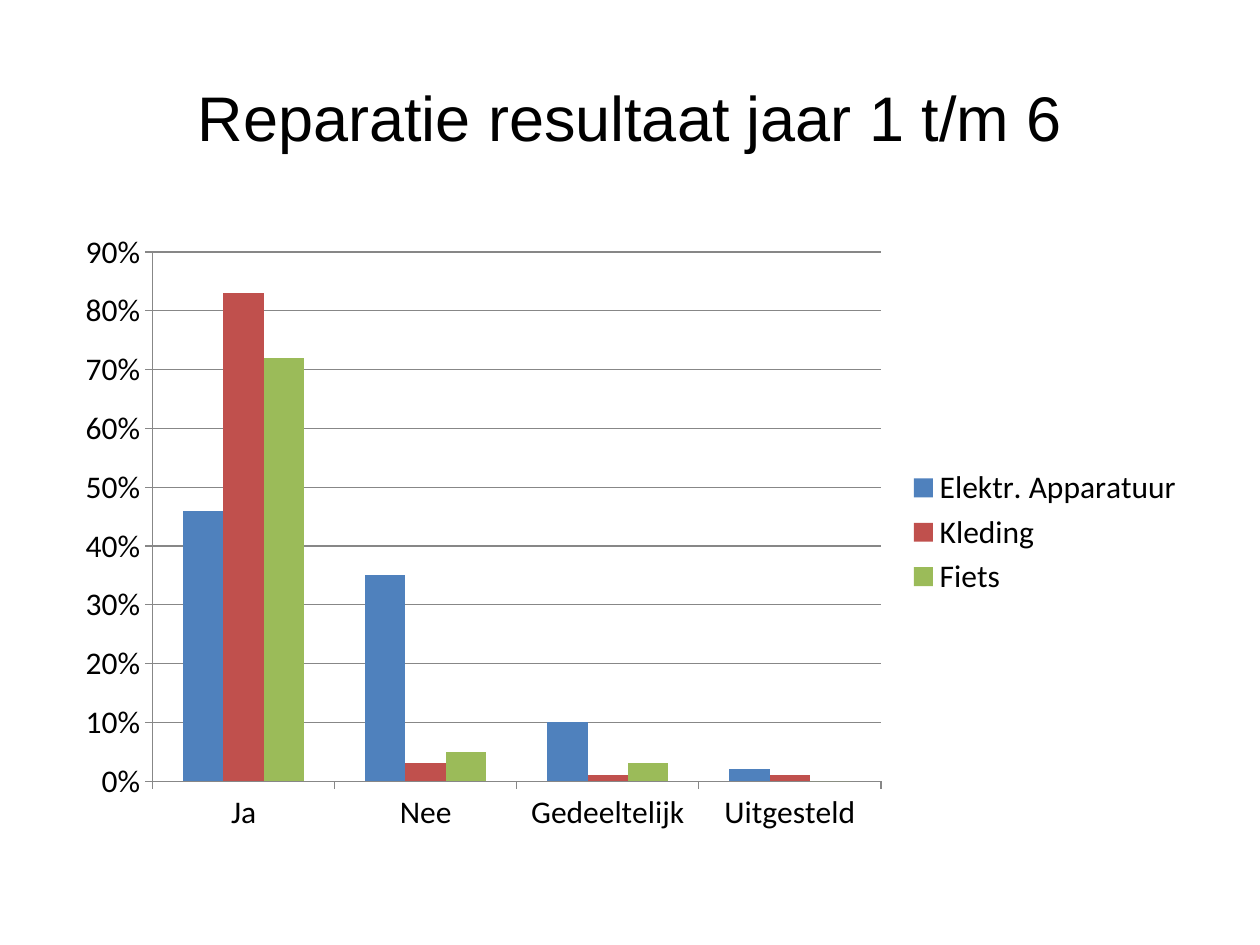
from dataclasses import dataclass

from pptx import Presentation
from pptx.chart.data import CategoryChartData
from pptx.dml.color import RGBColor
from pptx.enum.chart import XL_CHART_TYPE as ChartType
from pptx.enum.chart import XL_LEGEND_POSITION as LegendPosition
from pptx.enum.chart import XL_TICK_MARK as TickMark
from pptx.enum.text import MSO_ANCHOR as Anchor
from pptx.enum.text import PP_ALIGN as Align
from pptx.util import Inches, Pt


@dataclass(frozen=True)
class Theme:
    title_font: str = "Arial"
    chart_font: str = "Calibri"
    title_size: int = 36
    chart_size: int = 18
    text: str = "000000"
    line: str = "878787"
    background: str = "FFFFFF"
    series: tuple = ("4F81BD", "C0504D", "9BBB59")


def apply_format(target, values):
    for name, value in values.items():
        setattr(target, name, value)


class SlideBuilder:
    """Holds the theme and the current slide."""

    def __init__(self, deck, theme):
        self.theme = theme
        self.page = deck.slides.add_slide(deck.slide_layouts[5])
        fill = self.page.background.fill
        fill.solid()
        fill.fore_color.rgb = RGBColor.from_string(theme.background)

    def style_font(self, font, name, size):
        apply_format(font, {"name": name, "size": Pt(size), "bold": False})
        font.color.rgb = RGBColor.from_string(self.theme.text)

    def style_line(self, line):
        line.width = Pt(0.75)
        line.color.rgb = RGBColor.from_string(self.theme.line)

    def title(self, text, left, top, width, height):
        box = self.page.shapes.title
        apply_format(box, {"left": Inches(left), "top": Inches(top),
                           "width": Inches(width), "height": Inches(height)})
        apply_format(box.text_frame, {"word_wrap": True,
                                      "vertical_anchor": Anchor.MIDDLE})
        para = box.text_frame.paragraphs[0]
        para.alignment = Align.CENTER
        span = para.add_run()
        span.text = text
        self.style_font(span.font, self.theme.title_font, self.theme.title_size)

    def column_chart(self, categories, series, left, top, width, height):
        data = CategoryChartData(number_format="0%")
        data.categories = categories
        for name, values in series.items():
            data.add_series(name, values)
        chart = self.page.shapes.add_chart(
            ChartType.COLUMN_CLUSTERED, Inches(left), Inches(top),
            Inches(width), Inches(height), data).chart
        apply_format(chart, {"has_title": False, "has_legend": True})
        self.style_font(chart.font, self.theme.chart_font, self.theme.chart_size)
        apply_format(chart.legend, {"position": LegendPosition.RIGHT,
                                    "include_in_layout": False})

        # Columns
        plot = chart.plots[0]
        apply_format(plot, {"gap_width": 150, "overlap": 0,
                            "vary_by_categories": False})
        for columns, color in zip(plot.series, self.theme.series):
            columns.format.fill.solid()
            columns.format.fill.fore_color.rgb = RGBColor.from_string(color)

        # Axes and gridlines
        for axis in (chart.category_axis, chart.value_axis):
            apply_format(axis, {"major_tick_mark": TickMark.OUTSIDE,
                                "minor_tick_mark": TickMark.NONE})
            self.style_line(axis.format.line)
        apply_format(chart.value_axis, {
            "minimum_scale": 0, "maximum_scale": 0.9, "major_unit": 0.1,
            "has_major_gridlines": True})
        apply_format(chart.value_axis.tick_labels, {
            "number_format": "0%", "number_format_is_linked": False})
        self.style_line(chart.value_axis.major_gridlines.format.line)


def main():
    deck = Presentation()
    apply_format(deck, {"slide_width": Inches(10), "slide_height": Inches(7.5)})
    builder = SlideBuilder(deck, Theme())

    # Heading
    builder.title("Reparatie resultaat jaar 1 t/m 6", 0.5, 0.3, 9, 1.25)

    # Repair results per kind of item
    builder.column_chart(
        ["Ja", "Nee", "Gedeeltelijk", "Uitgesteld"],
        {"Elektr. Apparatuur": (0.46, 0.35, 0.10, 0.02),
         "Kleding": (0.83, 0.03, 0.01, 0.01),
         "Fiets": (0.72, 0.05, 0.03, 0)},
        0.5, 1.75, 9, 4.95)

    deck.save("out.pptx")


if __name__ == "__main__":
    main()
